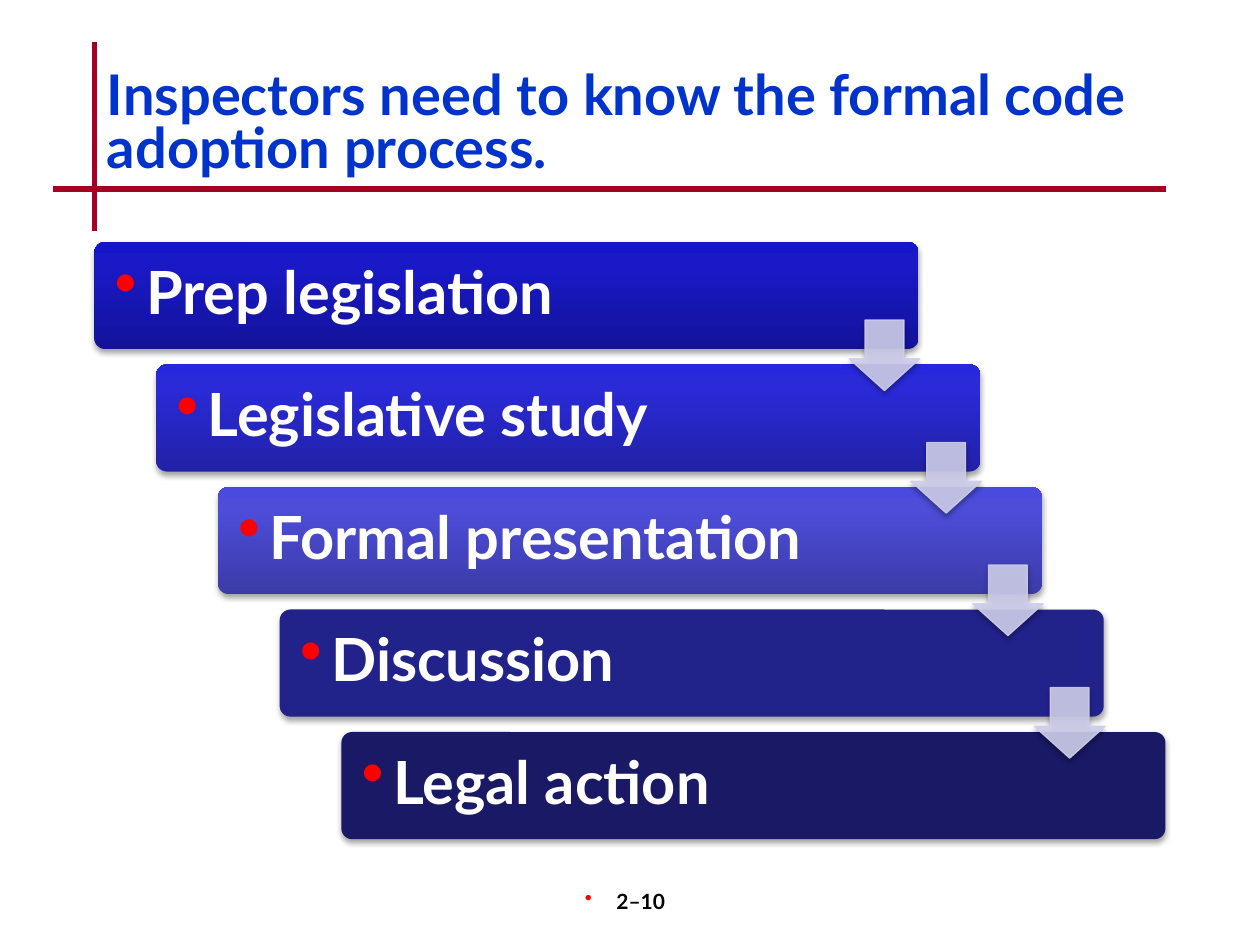
from dataclasses import dataclass

from lxml import etree
from pptx import Presentation
from pptx.dml.color import RGBColor
from pptx.enum.shapes import MSO_CONNECTOR, MSO_SHAPE
from pptx.enum.text import MSO_ANCHOR, PP_ALIGN
from pptx.oxml.ns import qn
from pptx.util import Inches, Pt

COLORS = {
    "rule": "A50021",
    "title": "0033CC",
    "page": "000000",
    "bullet": "FF0000",
    "label": "FFFFFF",
    "arrow": "CECEEC",
    "shadow": "000000",
}
FONT = "Lato"

# Staircase grid, in inches
LEFT, TOP = 0.75, 1.92
STEP_X, STEP_Y = 0.49, (5.81 - 1.92) / 4
BAR_WIDTH, BAR_HEIGHT = 6.54, 0.85
LABEL_OFFSET, LABEL_HEIGHT = 0.02, 0.8
ARROW_LEFT, ARROW_TOP, ARROW_SIZE = 6.74, 2.54, 0.56


@dataclass
class Step:
    label: str
    fills: tuple[str, ...]  # one colour, or three gradient stops from bottom to top
    label_width: float = 5.45


STEPS = [
    Step("Prep legislation", ("13139A", "1919C8", "1515CC"), 5.52),
    Step("Legislative study", ("2121A7", "2A2AD9", "2727DD")),
    Step("Formal presentation", ("3B3BA8", "4D4DDA", "4A4ADE")),
    Step("Discussion", ("22228B",)),
    Step("Legal action", ("191966",)),
]


def rgb(value: str) -> RGBColor:
    return RGBColor.from_string(value)


def add_child(parent, tag: str, **attributes):
    return etree.SubElement(parent, qn(tag), attributes)


def add_rule(slide, x1: float, y1: float, x2: float, y2: float) -> None:
    rule = slide.shapes.add_connector(
        MSO_CONNECTOR.STRAIGHT, Inches(x1), Inches(y1), Inches(x2), Inches(y2))
    rule.line.color.rgb = rgb(COLORS["rule"])
    rule.line.width = Pt(3)
    add_child(rule._element.spPr, "a:effectLst")


def add_text(slide, text: str, box: tuple, size: float, color: str,
             spacing: float = 1.0, inset: float | None = None,
             indent: float = 0, bullet_size: int = 100,
             align: PP_ALIGN = PP_ALIGN.LEFT,
             anchor: MSO_ANCHOR = MSO_ANCHOR.MIDDLE) -> None:
    """Add one bold paragraph, bulleted when it has a hanging indent."""
    frame = slide.shapes.add_textbox(*map(Inches, box)).text_frame
    frame.word_wrap = True
    frame.vertical_anchor = anchor
    if inset is not None:
        frame.margin_left = frame.margin_right = Inches(inset)
        frame.margin_top = frame.margin_bottom = Inches(inset)
    paragraph = frame.paragraphs[0]
    paragraph.text = text
    paragraph.alignment = align
    paragraph.line_spacing = spacing
    if indent:
        properties = paragraph._p.get_or_add_pPr()
        properties.set("marL", str(Inches(indent)))
        properties.set("indent", str(-Inches(indent)))
        add_child(add_child(properties, "a:buClr"), "a:srgbClr", val=COLORS["bullet"])
        add_child(properties, "a:buSzPct", val=str(bullet_size * 1000))
        add_child(properties, "a:buChar", char="•")
    paragraph.font.name = FONT
    paragraph.font.size = Pt(size)
    paragraph.font.bold = True
    paragraph.font.color.rgb = rgb(color)


def set_shadow(shape) -> None:
    shape.shadow.inherit = False
    effects = shape._element.spPr.find(qn("a:effectLst"))
    shadow = add_child(effects, "a:outerShdw", blurRad=str(Pt(3.1)), dist=str(Pt(1.8)),
                       dir="5400000", rotWithShape="0")
    color = add_child(shadow, "a:srgbClr", val=COLORS["shadow"])
    add_child(color, "a:alpha", val="35000")


def set_gradient(shape, fills: tuple[str, ...]) -> None:
    shape.fill.gradient()
    shape.fill.gradient_angle = 90
    stops = shape._element.spPr.find(qn("a:gradFill")).find(qn("a:gsLst"))
    for stop in list(stops):
        stops.remove(stop)
    for position, color in zip((0, 80, 100), fills):
        stop = add_child(stops, "a:gs", pos=str(position * 1000))
        add_child(stop, "a:srgbClr", val=color)


def add_step(slide, index: int, step: Step) -> None:
    left, top = LEFT + index * STEP_X, TOP + index * STEP_Y
    bar = slide.shapes.add_shape(
        MSO_SHAPE.ROUNDED_RECTANGLE, Inches(left), Inches(top),
        Inches(BAR_WIDTH), Inches(BAR_HEIGHT))
    bar.adjustments[0] = 0.1
    if len(step.fills) > 1:
        set_gradient(bar, step.fills)
    else:
        bar.fill.solid()
        bar.fill.fore_color.rgb = rgb(step.fills[0])
    bar.line.fill.background()
    set_shadow(bar)
    box = (left + LABEL_OFFSET, top + LABEL_OFFSET, step.label_width, LABEL_HEIGHT)
    add_text(slide, step.label, box, 34, COLORS["label"], spacing=0.9,
             inset=0.14, indent=0.25, bullet_size=110)


def add_arrow(slide, index: int) -> None:
    arrow = slide.shapes.add_shape(
        MSO_SHAPE.DOWN_ARROW, Inches(ARROW_LEFT + index * STEP_X),
        Inches(ARROW_TOP + index * STEP_Y), Inches(ARROW_SIZE), Inches(ARROW_SIZE))
    arrow.adjustments[0], arrow.adjustments[1] = 0.55, 0.45
    arrow.fill.solid()
    arrow.line.width = Pt(0.75)
    for target in (arrow.fill.fore_color, arrow.line.color):
        target.rgb = rgb(COLORS["arrow"])
    for color in arrow._element.spPr.iter(qn("a:srgbClr")):
        add_child(color, "a:alpha", val="90000")
    set_shadow(arrow)


def main() -> None:
    presentation = Presentation()
    presentation.slide_width, presentation.slide_height = Inches(10), Inches(7.5)
    slide = presentation.slides.add_slide(presentation.slide_layouts[6])

    # Crossed rules, page number and title
    add_rule(slide, 0.75, 0.33, 0.75, 1.83)
    add_rule(slide, 0.42, 1.5, 9.25, 1.5)
    add_text(slide, "2–10", (3.92, 7, 2.08, 0.5), 12, COLORS["page"],
             indent=0.25, align=PP_ALIGN.CENTER, anchor=MSO_ANCHOR.TOP)
    add_text(slide, "Inspectors need to know the formal code adoption process.",
             (0.75, 0.5, 8.5, 1), 32, COLORS["title"], spacing=0.8)

    # Staircase of steps, with the arrows in front
    for index, step in enumerate(STEPS):
        add_step(slide, index, step)
    for index in range(len(STEPS) - 1):
        add_arrow(slide, index)

    presentation.save("out.pptx")


if __name__ == "__main__":
    main()
